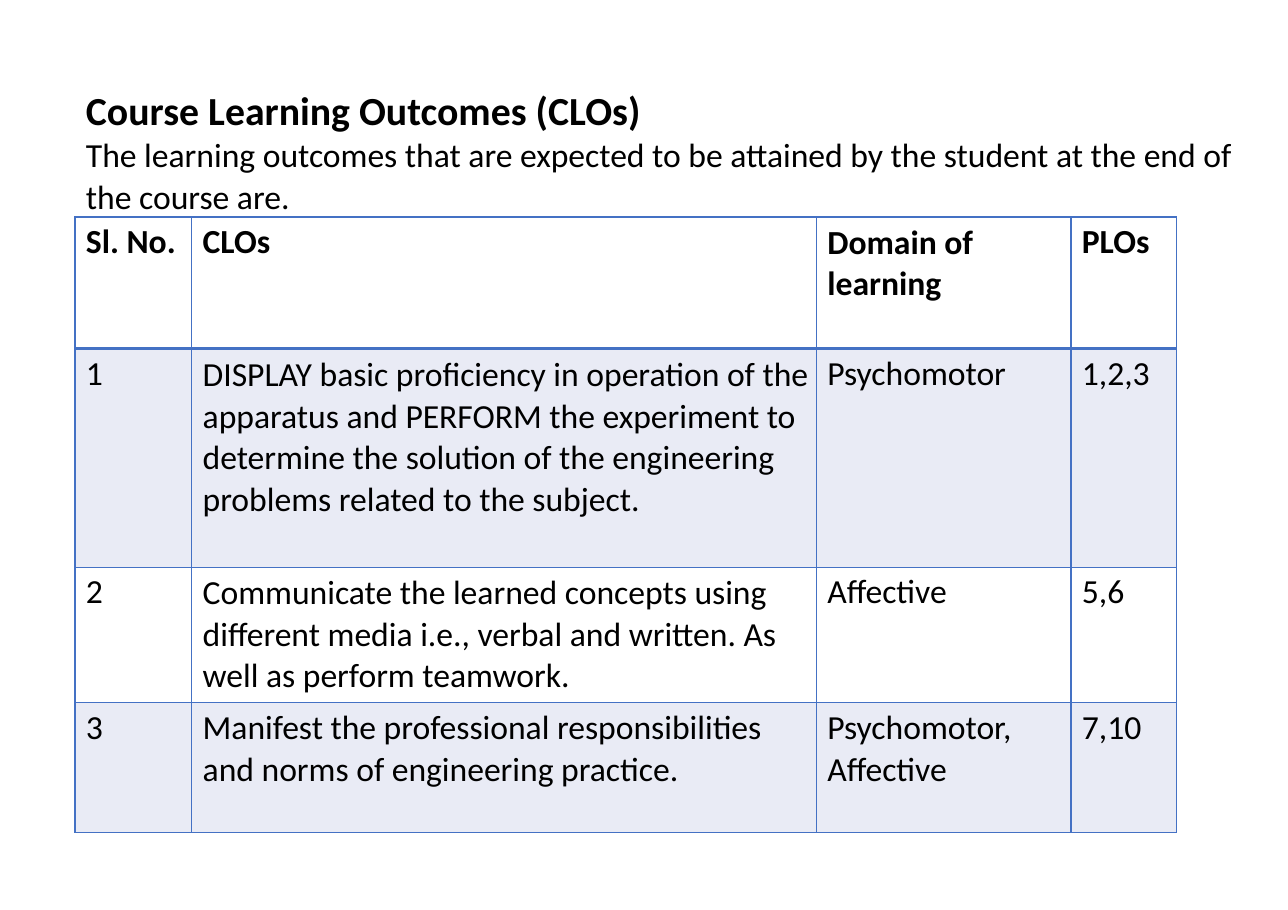
from dataclasses import dataclass

from lxml import etree
from pptx import Presentation
from pptx.dml.color import RGBColor
from pptx.enum.text import MSO_ANCHOR, MSO_AUTO_SIZE, PP_ALIGN
from pptx.oxml.ns import qn
from pptx.util import Inches, Pt

LEFT = PP_ALIGN.LEFT
TOP = MSO_ANCHOR.TOP
NO_FIT = MSO_AUTO_SIZE.NONE
TITLE_ONLY = 5


@dataclass(frozen=True)
class Theme:
    font: str = "Calibri"
    text: str = "000000"
    border: str = "4471C4"
    band: str = "E9EBF5"
    heading_size: float = 26
    body_size: float = 22
    thin: float = 1
    thick: float = 2.25


# Slide content
HEADING = "Course Learning Outcomes (CLOs)"
INTRO = ("The learning outcomes that are expected to be attained by the "
         "student at the end of the course are.")
ROWS = [
    ("Sl. No.", "CLOs", "Domain of learning", "PLOs"),
    ("1", "DISPLAY basic proficiency in operation of the apparatus and PERFORM "
          "the experiment to determine the solution of the engineering problems "
          "related to the subject.", "Psychomotor", "1,2,3"),
    ("2", "Communicate the learned concepts using different media i.e., verbal "
          "and written. As well as perform teamwork.", "Affective", "5,6"),
    ("3", "Manifest the professional responsibilities and norms of engineering "
          "practice.", "Psychomotor, Affective", "7,10"),
]
COL_WIDTHS = (1.06, 5.67, 2.31, 0.96)
ROW_HEIGHTS = (1.19, 1.99, 1.23, 1.18)
WRAPPED = {(0, 2), (1, 1), (2, 1), (3, 1), (3, 2)}


def add_text(p, text, *, theme, size, bold=False):
    """Append a formatted run to a paragraph."""
    r = p.add_run()
    r.text = text
    r.font.name = theme.font
    r.font.size = Pt(size)
    r.font.bold = bold
    r.font.color.rgb = RGBColor.from_string(theme.text)


def format_paragraph(p, *, indent, before, spacing=1.0):
    p.alignment = LEFT
    p.space_before = Pt(before)
    p.line_spacing = spacing
    pPr = p._p.get_or_add_pPr()
    pPr.set("marL", str(Inches(indent)))
    pPr.set("indent", "0")


def set_borders(cell, color, widths):
    """Draw the left, right, top and bottom borders of a cell."""
    tcPr = cell._tc.get_or_add_tcPr()
    for i, (side, width) in enumerate(zip("LRTB", widths)):
        ln = etree.Element(qn(f"a:ln{side}"), w=str(Pt(width)))
        fill = etree.SubElement(ln, qn("a:solidFill"))
        etree.SubElement(fill, qn("a:srgbClr"), val=color)
        tcPr.insert(i, ln)


class SlideBuilder:
    def __init__(self, prs, theme):
        self.theme = theme
        self.slide = prs.slides.add_slide(prs.slide_layouts[TITLE_ONLY])

    def title(self, heading, intro, left, top, width, height):
        t = self.theme
        sp = self.slide.shapes.title
        sp.left, sp.top = Inches(left), Inches(top)
        sp.width, sp.height = Inches(width), Inches(height)
        tf = sp.text_frame
        tf.word_wrap = True
        tf.auto_size = NO_FIT
        tf.vertical_anchor = TOP
        tf.margin_left = tf.margin_right = tf.margin_bottom = 0
        tf.margin_top = Inches(0.01)
        p = tf.paragraphs[0]
        format_paragraph(p, indent=0.01, before=0.2, spacing=1.02)
        add_text(p, heading, theme=t, size=t.heading_size, bold=True)
        p.add_line_break()
        add_text(p, intro, theme=t, size=t.body_size)

    def table(self, rows, left, top):
        frame = self.slide.shapes.add_table(
            len(rows), len(COL_WIDTHS), Inches(left), Inches(top),
            Inches(sum(COL_WIDTHS)), Inches(sum(ROW_HEIGHTS)))
        table = frame.table
        for column, width in zip(table.columns, COL_WIDTHS):
            column.width = Inches(width)
        for row, height in zip(table.rows, ROW_HEIGHTS):
            row.height = Inches(height)
        for i, row in enumerate(rows):
            for j, text in enumerate(row):
                self.cell(table.cell(i, j), text, i, (i, j) in WRAPPED)

    def cell(self, cell, text, row, wrapped):
        t = self.theme
        cell.margin_left = cell.margin_right = cell.margin_bottom = 0
        cell.margin_top = Inches(0.05 if row == 1 else 0.04)
        cell.vertical_anchor = TOP
        # Odd rows are banded
        if row % 2:
            cell.fill.solid()
            cell.fill.fore_color.rgb = RGBColor.from_string(t.band)
        else:
            cell.fill.background()
        # A thick rule parts the header from the body
        set_borders(cell, t.border, (t.thin, t.thin,
                                     t.thick if row == 1 else t.thin,
                                     t.thick if row == 0 else t.thin))
        p = cell.text_frame.paragraphs[0]
        before = 3.8 if row == 1 else 3
        if wrapped:
            format_paragraph(p, indent=0.1, before=before - 0.4, spacing=1.02)
        else:
            format_paragraph(p, indent=0.1, before=before)
        add_text(p, text, theme=t, size=t.body_size, bold=row == 0)


def main():
    prs = Presentation()
    prs.slide_width, prs.slide_height = Inches(11.69), Inches(8.26)
    s = SlideBuilder(prs, Theme())
    s.title(HEADING, INTRO, 0.77, 0.76, 10.5, 1.21)
    s.table(ROWS, 0.68, 1.97)
    prs.save("out.pptx")


if __name__ == "__main__":
    main()
